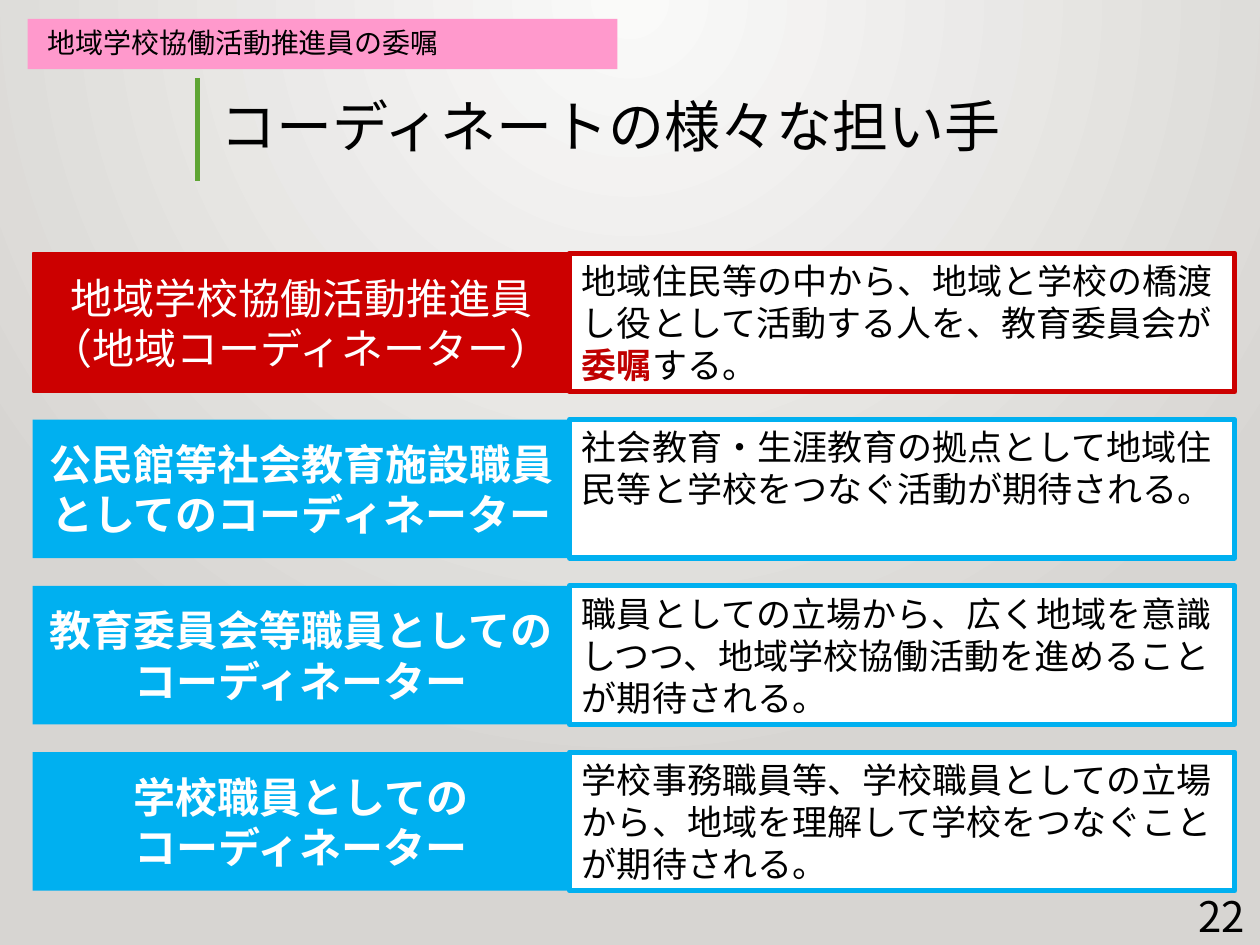
from dataclasses import dataclass

from lxml.etree import SubElement
from pptx import Presentation
from pptx.dml.color import RGBColor
from pptx.enum.shapes import MSO_CONNECTOR, MSO_SHAPE
from pptx.enum.text import MSO_ANCHOR, MSO_AUTO_SIZE, PP_ALIGN
from pptx.oxml.ns import qn
from pptx.util import Inches, Pt

FONT = "Noto Sans CJK JP"
BLACK, WHITE = "000000", "FFFFFF"
RED, DARK_RED, BLUE = "CC0000", "C00000", "00B0F0"
PINK, GREEN = "FF99CC", "5FA534"
FIRST_TOP, ROW_PITCH, ROW_HEIGHT = 2.01, 1.32, 1.1
ROLE_LEFT, ROLE_WIDTH = 0.26, 4.26
DUTY_LEFT, DUTY_WIDTH = 4.52, 5.28


@dataclass
class Span:
    text: str
    color: str = BLACK
    bold: bool = False


@dataclass
class Coordinator:
    role: list[str]
    duty: list[Span]
    color: str = BLUE
    bold: bool = True


COORDINATORS = [
    Coordinator(
        ["地域学校協働活動推進員", "（地域コーディネーター）"],
        [
            Span("地域住民等の中から、地域と学校の橋渡し役として活動する人を、教育委員会が"),
            Span("委嘱", DARK_RED, True),
            Span("する。"),
        ],
        RED,
        False,
    ),
    Coordinator(
        ["公民館等社会教育施設職員としてのコーディネーター"],
        [Span("社会教育・生涯教育の拠点として地域住民等と学校をつなぐ活動が期待される。")],
    ),
    Coordinator(
        ["教育委員会等職員としての", "コーディネーター"],
        [Span("職員としての立場から、広く地域を意識しつつ、地域学校協働活動を進めることが期待される。")],
    ),
    Coordinator(
        ["学校職員としての", "コーディネーター"],
        [Span("学校事務職員等、学校職員としての立場から、地域を理解して学校をつなぐことが期待される。")],
    ),
]


def rgb(color: str) -> RGBColor:
    return RGBColor.from_string(color)


def format_span(run, size: float, color: str = BLACK, bold: bool = False) -> None:
    run.font.size = Pt(size)
    run.font.name = FONT
    run.font.bold = bold
    run.font.color.rgb = rgb(color)
    SubElement(run.font._element, qn("a:ea")).set("typeface", FONT)


def write(box, paragraphs: list[list[Span]], size: float, align=PP_ALIGN.LEFT,
          anchor=MSO_ANCHOR.TOP) -> None:
    frame = box.text_frame
    frame.word_wrap = True
    frame.auto_size = MSO_AUTO_SIZE.NONE
    frame.vertical_anchor = anchor
    for index, spans in enumerate(paragraphs):
        para = frame.add_paragraph() if index else frame.paragraphs[0]
        para.alignment = align
        for span in spans:
            run = para.add_run()
            run.text = span.text
            format_span(run, size, span.color, span.bold)


def add_rectangle(page, left: float, top: float, width: float, height: float,
                  fill: str, line: str = "", line_width: float = 0):
    box = page.shapes.add_shape(
        MSO_SHAPE.RECTANGLE, Inches(left), Inches(top), Inches(width), Inches(height)
    )
    box.shadow.inherit = False
    box.fill.solid()
    box.fill.fore_color.rgb = rgb(fill)
    if line:
        box.line.color.rgb = rgb(line)
        box.line.width = Pt(line_width)
    else:
        box.line.fill.background()
    return box


def add_coordinator(page, coordinator: Coordinator, top: float) -> None:
    outline = RED if coordinator.color == RED else ""
    role = add_rectangle(
        page, ROLE_LEFT, top, ROLE_WIDTH, ROW_HEIGHT, coordinator.color, outline, 1.25
    )
    lines = [[Span(text, WHITE, coordinator.bold)] for text in coordinator.role]
    write(role, lines, 24, PP_ALIGN.CENTER, MSO_ANCHOR.MIDDLE)
    duty = add_rectangle(
        page, DUTY_LEFT, top, DUTY_WIDTH, ROW_HEIGHT, WHITE, coordinator.color, 3
    )
    write(duty, [coordinator.duty], 20)


def paint_background(page) -> None:
    fill = page.background.fill
    fill.gradient()
    for stop, color in zip(fill.gradient_stops, ("FAFAF9", "D7D5D2")):
        stop.color.rgb = rgb(color)
    gradient = page.element.find(".//" + qn("a:gradFill"))
    gradient.remove(gradient.find(qn("a:lin")))
    circle = SubElement(gradient, qn("a:path"), {"path": "circle"})
    SubElement(circle, qn("a:fillToRect"), {"l": "43000", "r": "43000", "b": "100000"})


def add_heading(page) -> None:
    title = page.shapes.title
    title.left, title.top = Inches(1.55), Inches(0.68)
    title.width, title.height = Inches(7.28), Inches(0.64)
    write(title, [[Span("コーディネートの様々な担い手")]], 32)
    title.text_frame.margin_left = Inches(0.2)

    section = add_rectangle(page, 0.22, 0.15, 4.68, 0.4, PINK)
    write(section, [[Span("地域学校協働活動推進員の委嘱")]], 16, PP_ALIGN.JUSTIFY)
    section.text_frame.margin_left = Inches(0.16)

    rule = page.shapes.add_connector(
        MSO_CONNECTOR.STRAIGHT, Inches(1.57), Inches(0.62), Inches(1.57), Inches(1.44)
    )
    rule.line.color.rgb = rgb(GREEN)
    rule.line.width = Pt(3)
    SubElement(rule._element.spPr, qn("a:effectLst"))


def main() -> None:
    deck = Presentation()
    deck.slide_width, deck.slide_height = Inches(10), Inches(7.5)
    page = deck.slides.add_slide(deck.slide_layouts[5])
    paint_background(page)
    for index, coordinator in enumerate(COORDINATORS):
        add_coordinator(page, coordinator, FIRST_TOP + index * ROW_PITCH)
    add_heading(page)
    number = page.shapes.add_textbox(Inches(9), Inches(7.02), Inches(0.98), Inches(0.5))
    write(number, [[Span("22")]], 24, PP_ALIGN.RIGHT)
    deck.save("out.pptx")


if __name__ == "__main__":
    main()
